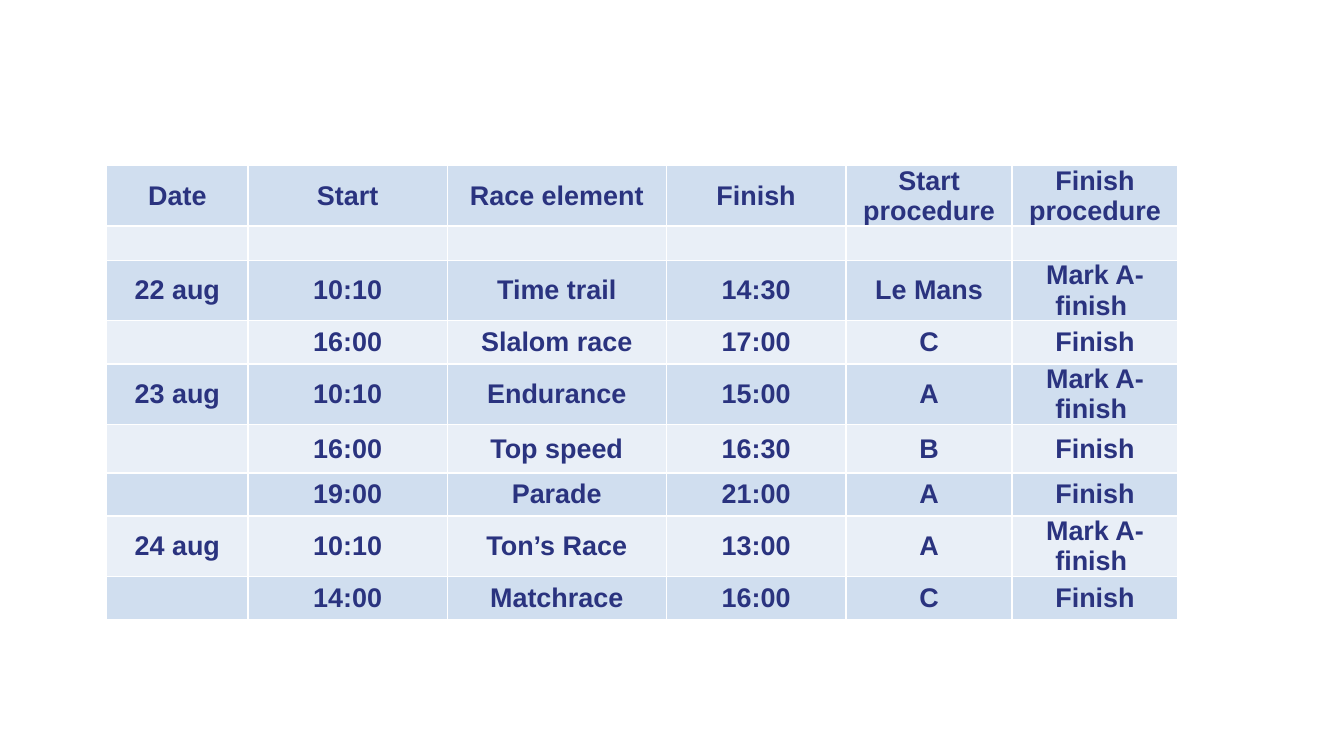
from dataclasses import dataclass

from lxml.etree import SubElement
from pptx import Presentation
from pptx.dml.color import RGBColor
from pptx.enum.text import MSO_ANCHOR, PP_ALIGN
from pptx.oxml.ns import qn
from pptx.util import Inches, Pt


@dataclass(frozen=True)
class Theme:
    font: str = "Arial"
    text_size: float = 18
    border_width: float = 1
    text: str = "2A337F"
    border: str = "FFFFFF"
    bands: tuple = ("D0DEEF", "E9EFF7")


# Column widths and row heights in percent of the slide's size
COLUMNS = [10.51, 14.84, 16.28, 13.39, 12.35, 12.35]
SPACER, SINGLE, TALL, DOUBLE = 4.56, 5.71, 6.42, 7.85

SCHEDULE = [
    (DOUBLE, ["Date", "Start", "Race element", "Finish", "Start procedure", "Finish procedure"]),
    (SPACER, [""] * len(COLUMNS)),
    (DOUBLE, ["22 aug", "10:10", "Time trail", "14:30", "Le Mans", "Mark A- finish "]),
    (SINGLE, ["", "16:00", "Slalom race", "17:00", "C", "Finish"]),
    (DOUBLE, ["23 aug", "10:10", "Endurance", "15:00", "A", "Mark A- finish "]),
    (TALL, ["", "16:00", "Top speed", "16:30", "B", "Finish"]),
    (SINGLE, ["", "19:00", "Parade", "21:00", "A", "Finish"]),
    (DOUBLE, ["24 aug", "10:10", "Ton’s Race", "13:00", "A", "Mark A- finish "]),
    (SINGLE, ["", "14:00", "Matchrace", "16:00", "C", "Finish"]),
]


class Page:
    def __init__(self, deck, theme):
        self.deck = deck
        self.theme = theme
        self.slide = deck.slides.add_slide(deck.slide_layouts[6])

    def across(self, percent):
        return round(self.deck.slide_width * percent / 100)

    def down(self, percent):
        return round(self.deck.slide_height * percent / 100)

    def table(self, left, top, columns, rows):
        """Draw a banded table; rows are pairs of height and cell texts."""
        frame = self.slide.shapes.add_table(
            len(rows), len(columns), self.across(left), self.down(top),
            self.across(sum(columns)), self.down(sum(height for height, _ in rows)))
        table = frame.table
        table.first_row = table.horz_banding = False
        for column, width in zip(table.columns, columns):
            column.width = self.across(width)
        for index, (row, (height, texts)) in enumerate(zip(table.rows, rows)):
            row.height = self.down(height)
            band = self.theme.bands[index % len(self.theme.bands)]
            for cell, text in zip(row.cells, texts):
                self.cell(cell, text, band)

    def cell(self, cell, text, band):
        cell.margin_left = cell.margin_right = cell.margin_top = cell.margin_bottom = 0
        cell.vertical_anchor = MSO_ANCHOR.MIDDLE
        self.borders(cell)
        cell.fill.solid()
        cell.fill.fore_color.rgb = RGBColor.from_string(band)
        cell.text = text
        para = cell.text_frame.paragraphs[0]
        para.alignment = PP_ALIGN.CENTER
        para.font.name = self.theme.font
        para.font.size = Pt(self.theme.text_size)
        para.font.bold = True
        para.font.color.rgb = RGBColor.from_string(self.theme.text)

    def borders(self, cell):
        properties = cell._tc.get_or_add_tcPr()
        for side in ("lnL", "lnR", "lnT", "lnB"):
            line = SubElement(properties, qn(f"a:{side}"), w=str(Pt(self.theme.border_width)))
            fill = SubElement(line, qn("a:solidFill"))
            SubElement(fill, qn("a:srgbClr"), val=self.theme.border)


def main():
    deck = Presentation()
    deck.slide_width, deck.slide_height = Inches(12.47), Inches(7.01)
    page = Page(deck, Theme())
    page.table(7.94, 21.9, COLUMNS, SCHEDULE)
    deck.save("out.pptx")


if __name__ == "__main__":
    main()
